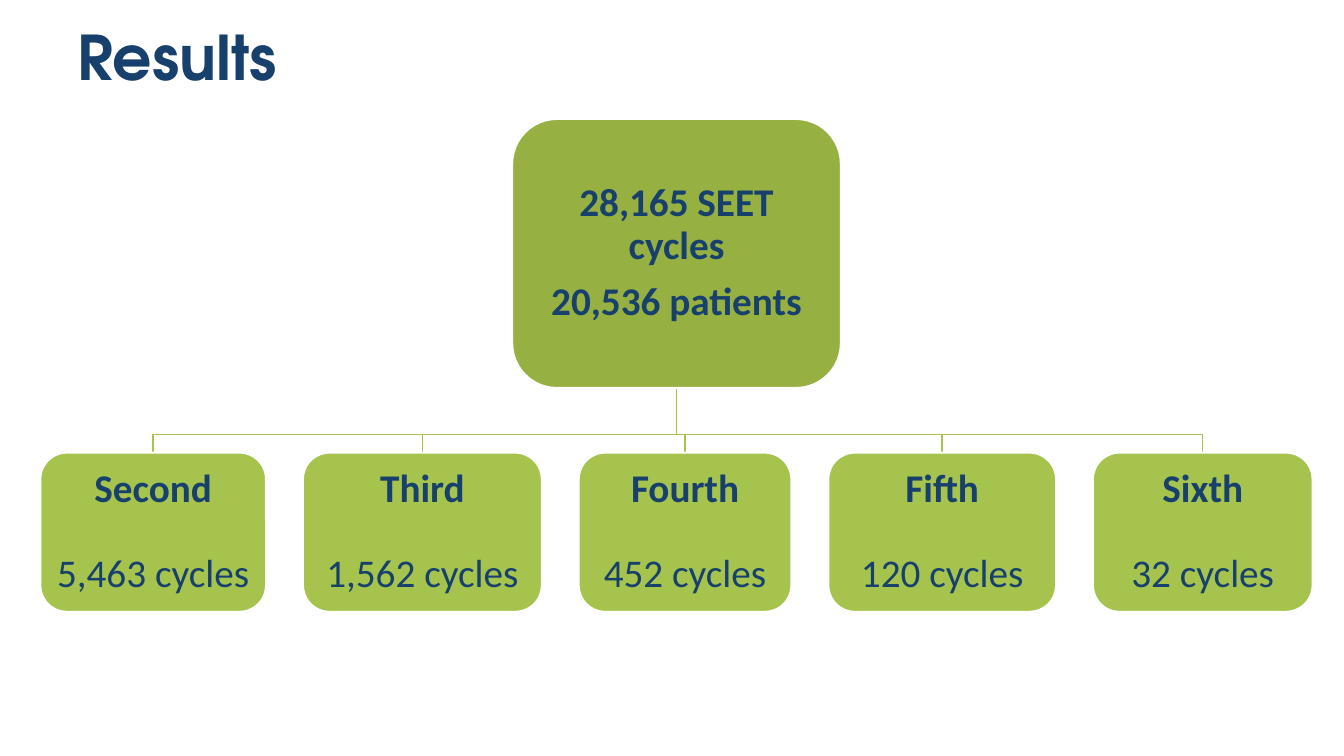
from dataclasses import dataclass
from itertools import accumulate

from pptx import Presentation
from pptx.dml.color import RGBColor
from pptx.enum.shapes import MSO_SHAPE
from pptx.enum.text import MSO_ANCHOR, PP_ALIGN
from pptx.util import Inches, Pt


@dataclass(frozen=True)
class Theme:
    navy: RGBColor = RGBColor.from_string("17406D")
    olive: RGBColor = RGBColor.from_string("96B042")
    lime: RGBColor = RGBColor.from_string("A6C34E")
    white: RGBColor = RGBColor.from_string("FFFFFF")
    title_font: str = "TeX Gyre Adventor"
    body_font: str = "Calibri"
    title_size: Pt = Pt(44)
    body_size: Pt = Pt(28)
    link_width: Pt = Pt(1)
    outline_width: Pt = Pt(1.5)


THEME = Theme()
WIDTH, HEIGHT = Inches(13.33), Inches(7.5)

TITLE_AREA = (5, 0, 90, 16)
TOTAL_AREA = (38.11, 15.73, 24.46, 35.6)
TOTAL_LINES = [("28,165 SEET cycles", True), ("20,536 patients", True)]
ROW_LEFT, ROW_RIGHT = 3, 97.67
ROW_TOP, ROW_HEIGHT = 59.87, 21.07
BRANCH_LEVEL = 57.47
ATTEMPTS = [
    ("Second", "5,463 cycles", 16.8),
    ("Third", "1,562 cycles", 17.78),
    ("Fourth", "452 cycles", 15.83),
    ("Fifth", "120 cycles", 16.95),
    ("Sixth", "32 cycles", 16.35),
]


def across(share):
    return round(WIDTH * share / 100)


def down(share):
    return round(HEIGHT * share / 100)


def place(area):
    left, top, width, height = area
    return across(left), down(top), across(width), down(height)


def apply(target, values):
    for name, value in values.items():
        setattr(target, name, value)


def write_lines(frame, lines, gap, align, font):
    for index, (text, bold) in enumerate(lines):
        para = frame.add_paragraph() if index else frame.paragraphs[0]
        apply(para, {"alignment": align, "line_spacing": 0.9})
        if index:
            para.space_before = gap
        span = para.add_run()
        span.text = text
        apply(span.font, {**font, "bold": bold})
        span.font.color.rgb = THEME.navy


def add_title(page, text):
    box = page.shapes.add_textbox(*place(TITLE_AREA))
    apply(box.text_frame, {"word_wrap": True, "vertical_anchor": MSO_ANCHOR.MIDDLE})
    font = {"name": THEME.title_font, "size": THEME.title_size}
    write_lines(box.text_frame, [(text, True)], Pt(0), PP_ALIGN.LEFT, font)


def add_node(page, area, fill, lines, gap):
    box = page.shapes.add_shape(MSO_SHAPE.ROUNDED_RECTANGLE, *place(area))
    box.shadow.inherit = False
    box.fill.solid()
    box.fill.fore_color.rgb = fill
    box.line.color.rgb = THEME.white
    box.line.width = THEME.outline_width
    margins = dict.fromkeys(
        ("margin_left", "margin_top", "margin_right", "margin_bottom"), Inches(0.02)
    )
    apply(box.text_frame, {
        **margins, "word_wrap": True, "vertical_anchor": MSO_ANCHOR.MIDDLE,
    })
    font = {"name": THEME.body_font, "size": THEME.body_size}
    write_lines(box.text_frame, lines, gap, PP_ALIGN.CENTER, font)


def add_link(page, start, target):
    left, top, width, height = TOTAL_AREA
    points = [(start, BRANCH_LEVEL), (target, BRANCH_LEVEL), (target, ROW_TOP)]
    builder = page.shapes.build_freeform(across(start), down(top + height))
    builder.add_line_segments([(across(x), down(y)) for x, y in points], close=False)
    link = builder.convert_to_shape()
    link.shadow.inherit = False
    link.fill.background()
    link.line.color.rgb = THEME.lime
    link.line.width = THEME.link_width


def attempt_areas():
    widths = [width for _, _, width in ATTEMPTS]
    gap = (ROW_RIGHT - ROW_LEFT - sum(widths)) / (len(widths) - 1)
    lefts = accumulate((width + gap for width in widths[:-1]), initial=ROW_LEFT)
    return [(left, ROW_TOP, width, ROW_HEIGHT) for left, width in zip(lefts, widths)]


def main():
    deck = Presentation()
    apply(deck, {"slide_width": WIDTH, "slide_height": HEIGHT})
    page = deck.slides.add_slide(deck.slide_layouts[6])
    add_title(page, "Results")
    areas = attempt_areas()
    trunk = TOTAL_AREA[0] + TOTAL_AREA[2] / 2
    for left, _, width, _ in areas:
        add_link(page, trunk, left + width / 2)
    add_node(page, TOTAL_AREA, THEME.olive, TOTAL_LINES, Pt(10))
    for area, (order, cycles, _) in zip(areas, ATTEMPTS):
        add_node(page, area, THEME.lime, [(order, True), (cycles, False)], Pt(30))
    deck.save("out.pptx")


if __name__ == "__main__":
    main()
